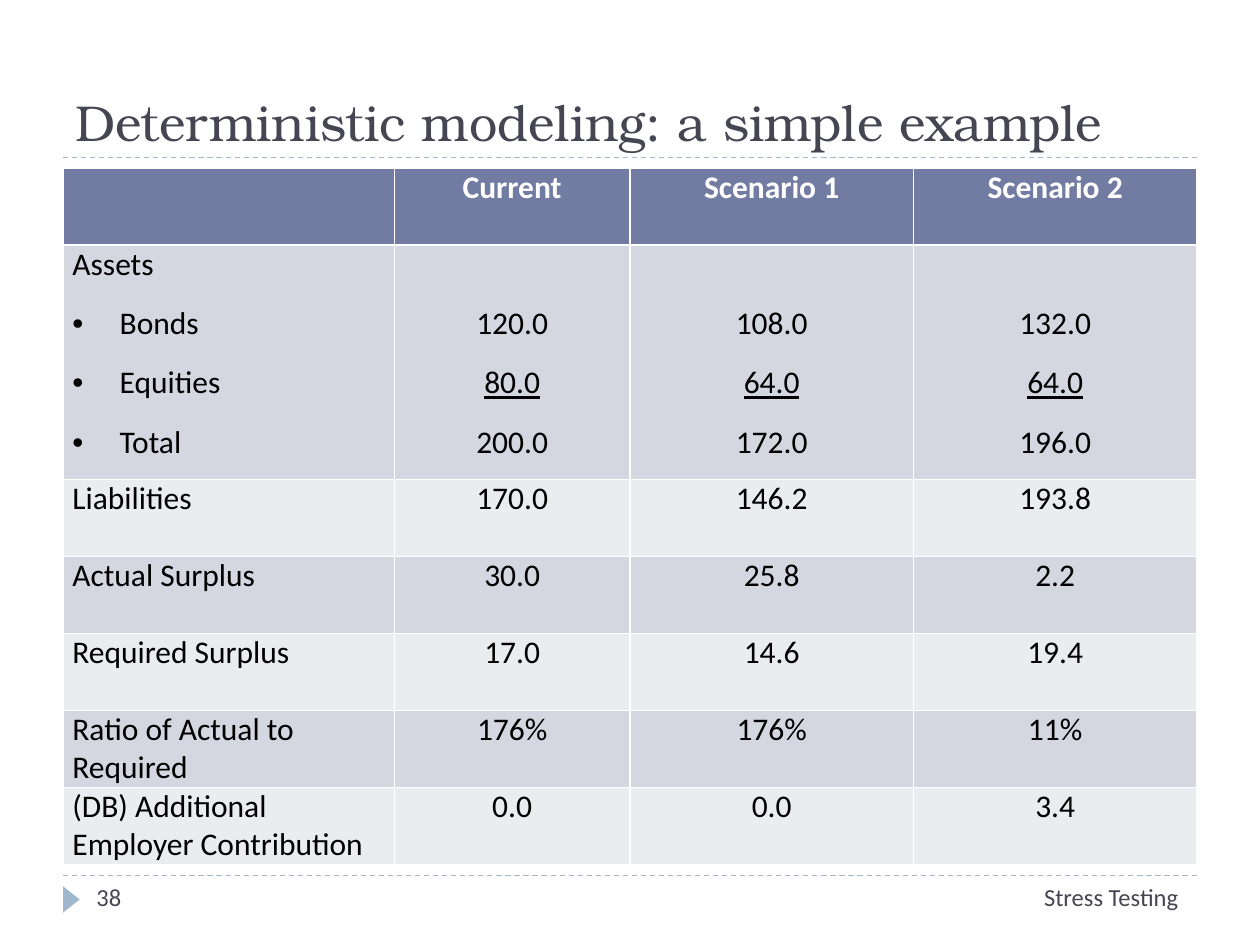
from dataclasses import dataclass

from lxml import etree
from pptx import Presentation
from pptx.dml.color import RGBColor
from pptx.enum import dml, shapes, text
from pptx.oxml import ns
from pptx.util import Pt


@dataclass(frozen=True)
class Theme:
    ink: RGBColor = RGBColor.from_string("464653")
    accent: RGBColor = RGBColor.from_string("9FB8CD")
    header: RGBColor = RGBColor.from_string("727CA3")
    bands: tuple = (RGBColor.from_string("D5D7E0"), RGBColor.from_string("EBECF0"))
    white: RGBColor = RGBColor.from_string("FFFFFF")
    black: RGBColor = RGBColor.from_string("000000")
    title_font: str = "TeX Gyre Bonum"
    body_font: str = "Calibri"
    title_size: float = 28.8
    table_size: float = 18
    footer_size: float = 14


THEME = Theme()
LEFT, CENTER, RIGHT = text.PP_ALIGN.LEFT, text.PP_ALIGN.CENTER, text.PP_ALIGN.RIGHT
MARGIN, CONTENT_WIDTH = 36, 648
ASSETS_LINE = 34
COLUMN_WIDTHS = (189.4, 134.6, 162, 162)
ROW_HEIGHTS = (44, 134, 44, 44, 44, 44, 44)
SCENARIOS = ("", "Current", "Scenario 1", "Scenario 2")
ASSETS = (
    ("Assets", "Bonds", "Equities", "Total"),
    ("120.0", "80.0", "200.0"),
    ("108.0", "64.0", "172.0"),
    ("132.0", "64.0", "196.0"),
)
MEASURES = (
    ("Liabilities", "170.0", "146.2", "193.8"),
    ("Actual Surplus", "30.0", "25.8", "2.2"),
    ("Required Surplus", "17.0", "14.6", "19.4"),
    ("Ratio of Actual to Required", "176%", "176%", "11%"),
    ("(DB) Additional Employer Contribution", "0.0", "0.0", "3.4"),
)


def style(paragraph, font, size, color, align):
    paragraph.alignment = align
    paragraph.font.name = font
    paragraph.font.size = Pt(size)
    paragraph.font.color.rgb = color


def add_rule(slide, left, top, width):
    rule = slide.shapes.add_connector(
        shapes.MSO_CONNECTOR.STRAIGHT, Pt(left), Pt(top), Pt(left + width), Pt(top))
    rule.line.color.rgb = THEME.accent
    rule.line.width = Pt(0.75)
    rule.line.dash_style = dml.MSO_LINE.DASH
    etree.SubElement(rule._element.spPr, ns.qn("a:effectLst"))


def add_heading(slide, left, top, width, height):
    heading = slide.shapes.title
    heading.left, heading.top = Pt(left), Pt(top)
    heading.width, heading.height = Pt(width), Pt(height)
    frame = heading.text_frame
    frame.text = "Deterministic modeling: a simple example"
    frame.auto_size = text.MSO_AUTO_SIZE.NONE
    frame.vertical_anchor = text.MSO_ANCHOR.BOTTOM
    style(frame.paragraphs[0], THEME.title_font, THEME.title_size, THEME.ink, LEFT)
    add_rule(slide, left, top + height, width)


def fill_cell(cell, lines, fill, color, align):
    cell.fill.solid()
    cell.fill.fore_color.rgb = fill
    cell.margin_left = cell.margin_right = Pt(5.4)
    cell.margin_top = cell.margin_bottom = 0
    cell.text = "\n".join(lines)
    for paragraph in cell.text_frame.paragraphs:
        style(paragraph, THEME.body_font, THEME.table_size, color, align)
        paragraph.space_after = Pt(12)


def add_bullet(paragraph):
    properties = paragraph._p.get_or_add_pPr()
    properties.set("marL", str(Pt(27)))
    properties.set("indent", str(-Pt(27)))
    etree.SubElement(properties, ns.qn("a:buFont"), typeface="Arial")
    etree.SubElement(properties, ns.qn("a:buChar"), char="•")


def add_scenarios(slide, left, top, width, height):
    rows = [[(entry,) for entry in SCENARIOS], ASSETS]
    rows += [[(entry,) for entry in measure] for measure in MEASURES]
    table = slide.shapes.add_table(
        len(rows), len(SCENARIOS), Pt(left), Pt(top), Pt(width), Pt(height)).table
    for column, column_width in zip(table.columns, COLUMN_WIDTHS):
        column.width = Pt(column_width)
    for r, (row, row_height) in enumerate(zip(rows, ROW_HEIGHTS)):
        table.rows[r].height = Pt(row_height)
        fill = THEME.bands[(r - 1) % 2] if r else THEME.header
        color = THEME.black if r else THEME.white
        for c, lines in enumerate(row):
            fill_cell(table.cell(r, c), lines, fill, color, CENTER if c else LEFT)

    for c in range(len(SCENARIOS)):
        table.cell(0, c).text_frame.paragraphs[0].font.bold = True
    for asset in table.cell(1, 0).text_frame.paragraphs[1:]:
        add_bullet(asset)
    for c in range(1, len(SCENARIOS)):
        amounts = table.cell(1, c)
        amounts.margin_top = Pt(ASSETS_LINE)
        equities = amounts.text_frame.paragraphs[1]
        equities.runs[0].font.underline = True


def add_footer(slide, left, top, width, height):
    add_rule(slide, left, top, width)
    marker = slide.shapes.add_shape(
        shapes.MSO_SHAPE.ISOSCELES_TRIANGLE,
        Pt(left - 2.7), Pt(top + 8.9), Pt(15), Pt(9.4))
    marker.rotation = 90
    marker.shadow.inherit = False
    marker.fill.solid()
    marker.fill.fore_color.rgb = THEME.accent
    marker.line.fill.background()
    for label, offset, label_width, align in (
            ("Stress Testing", 192, 452.4, RIGHT), ("38", 12, 156, LEFT)):
        box = slide.shapes.add_textbox(
            Pt(left + offset), Pt(top), Pt(label_width), Pt(height))
        box.text_frame.word_wrap = True
        box.text_frame.text = label
        style(box.text_frame.paragraphs[0], THEME.body_font, THEME.footer_size,
              THEME.ink, align)


def main():
    deck = Presentation()
    deck.slide_width, deck.slide_height = Pt(720), Pt(540)
    slide = deck.slides.add_slide(deck.slide_layouts[5])
    add_heading(slide, MARGIN, 12, CONTENT_WIDTH, 78)
    add_footer(slide, MARGIN, 500.4, CONTENT_WIDTH, 28.8)
    add_scenarios(slide, MARGIN, 96, CONTENT_WIDTH, sum(ROW_HEIGHTS))
    deck.save("out.pptx")


if __name__ == "__main__":
    main()
